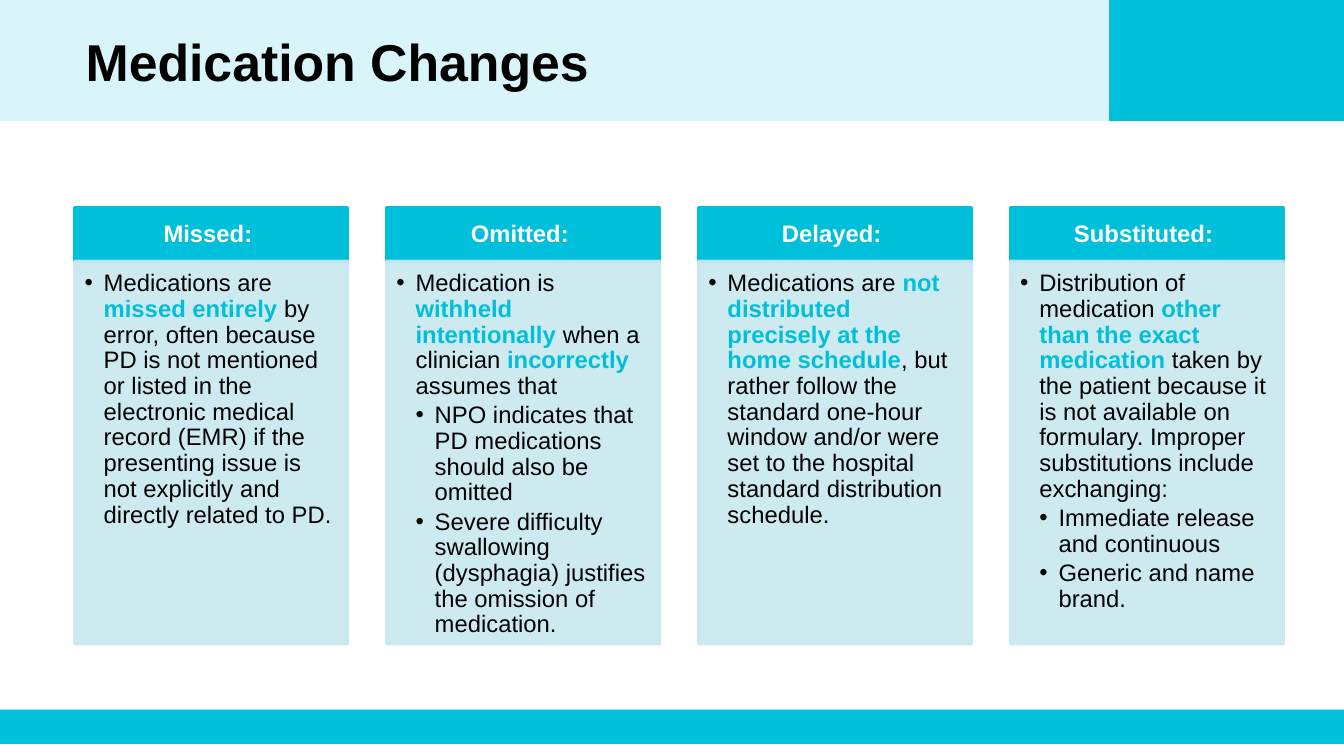
from dataclasses import dataclass

from lxml import etree
from pptx import Presentation, util as u
from pptx.dml.color import RGBColor
from pptx.enum import shapes as shp, text as txt
from pptx.oxml import ns

COLOURS = {
    "accent": "00BFDA",
    "banner": "D9F5F9",
    "panel": "C9E8F0",
    "ink": "000000",
    "paper": "FFFFFF",
}
FONT = "Arial"
BODY_SIZE = 17
INDENT = 0.19
PANEL_OPACITY = 90

# Grid, in inches
WIDTH, HEIGHT = 13.33, 7.5
BANNER_HEIGHT, BANNER_SPLIT = 1.2, 11
GRID_LEFT, GRID_RIGHT, COLUMN_WIDTH = 0.74, 12.73, 2.71
HEADING_ROW = (2.06, 0.54)
PANEL_ROW = (2.59, 3.8)


@dataclass
class Box:
    left: float
    top: float
    width: float
    height: float


@dataclass
class Change:
    """One column; words between asterisks are emphasised."""
    heading: str
    definition: str
    examples: tuple[str, ...] = ()


CHANGES = [
    Change("Missed: ",
           "Medications are *missed entirely *by error, often because PD is not "
           "mentioned or listed in the electronic medical record (EMR) if the "
           "presenting issue is not explicitly and directly related to PD."),
    Change("Omitted: ",
           "Medication is *withheld intentionally *when a clinician *incorrectly* "
           "assumes that",
           ("NPO indicates that PD medications should also be omitted",
            "Severe difficulty swallowing (dysphagia) justifies the omission of "
            "medication.")),
    Change("Delayed: ",
           "Medications are *not distributed precisely at the home schedule*, but "
           "rather follow the standard one-hour window and/or were set to the "
           "hospital standard distribution schedule."),
    Change("Substituted: ",
           "Distribution of medication *other than the exact medication *taken by "
           "the patient because it is not available on formulary. Improper "
           "substitutions include exchanging:",
           ("Immediate release and continuous", "Generic and name brand.")),
]


def rgb(name: str) -> RGBColor:
    return RGBColor.from_string(COLOURS[name])


def apply(target, formats: dict) -> None:
    for attribute, value in formats.items():
        setattr(target, attribute, value)


def set_frame(frame, anchor, left: float, top: float, right: float, bottom: float) -> None:
    apply(frame, {
        "word_wrap": True,
        "vertical_anchor": anchor,
        "margin_left": u.Inches(left),
        "margin_top": u.Inches(top),
        "margin_right": u.Inches(right),
        "margin_bottom": u.Inches(bottom),
    })


def add_run(paragraph, words: str, size: float, colour: str, bold: bool) -> None:
    run = paragraph.add_run()
    run.text = words
    apply(run.font, {"name": FONT, "size": u.Pt(size), "bold": bold})
    run.font.color.rgb = rgb(colour)


def add_block(slide, box: Box, colour: str, outline: float = 0, opacity: int = 100):
    block = slide.shapes.add_shape(
        shp.MSO_SHAPE.RECTANGLE,
        *(u.Inches(side) for side in (box.left, box.top, box.width, box.height)))
    block.shadow.inherit = False
    block.fill.solid()
    block.fill.fore_color.rgb = rgb(colour)
    if outline:
        block.line.width = u.Pt(outline)
        block.line.color.rgb = rgb(colour)
    else:
        block.line.fill.background()
    if opacity < 100:
        for tint in block._element.spPr.iter(ns.qn("a:srgbClr")):
            etree.SubElement(tint, ns.qn("a:alpha"), val=str(opacity * 1000))
    return block


def add_bullet(paragraph, level: int, words: str) -> None:
    properties = paragraph._p.get_or_add_pPr()
    properties.set("marL", str(u.Inches(INDENT * level)))
    properties.set("indent", str(-u.Inches(INDENT)))
    tint = etree.SubElement(properties, ns.qn("a:buClr"))
    etree.SubElement(tint, ns.qn("a:srgbClr"), val=COLOURS["ink"])
    etree.SubElement(properties, ns.qn("a:buFont"), typeface=FONT)
    etree.SubElement(properties, ns.qn("a:buChar"), char="•")
    apply(paragraph, {"level": level, "line_spacing": 0.9,
                      "alignment": txt.PP_ALIGN.LEFT})
    if level > 1:
        paragraph.space_before = u.Pt(2.5)
    for position, piece in enumerate(words.split("*")):
        emphasised = position % 2 == 1
        add_run(paragraph, piece, BODY_SIZE, "accent" if emphasised else "ink", emphasised)


def add_change(slide, left: float, change: Change) -> None:
    heading = add_block(slide, Box(left, HEADING_ROW[0], COLUMN_WIDTH, HEADING_ROW[1]),
                        "accent", outline=2).text_frame
    set_frame(heading, txt.MSO_ANCHOR.MIDDLE, 0.13, 0.08, 0.13, 0.08)
    label = heading.paragraphs[0]
    apply(label, {"alignment": txt.PP_ALIGN.CENTER, "line_spacing": 0.9})
    add_run(label, change.heading, BODY_SIZE, "paper", True)

    panel = add_block(slide, Box(left, PANEL_ROW[0], COLUMN_WIDTH, PANEL_ROW[1]),
                      "panel", outline=2, opacity=PANEL_OPACITY).text_frame
    set_frame(panel, txt.MSO_ANCHOR.TOP, 0.1, 0.1, 0.13, 0.15)
    add_bullet(panel.paragraphs[0], 1, change.definition)
    for example in change.examples:
        add_bullet(panel.add_paragraph(), 2, example)


def main() -> None:
    deck = Presentation()
    apply(deck, {"slide_width": u.Inches(WIDTH), "slide_height": u.Inches(HEIGHT)})
    slide = deck.slides.add_slide(deck.slide_layouts[6])

    # Banner and footer bands
    add_block(slide, Box(0, 0, WIDTH, BANNER_HEIGHT), "banner")
    add_block(slide, Box(BANNER_SPLIT, 0, WIDTH - BANNER_SPLIT, BANNER_HEIGHT), "accent")
    add_block(slide, Box(0, 7.04, WIDTH, 0.34), "accent")

    # Title
    title = slide.shapes.add_textbox(
        u.Inches(0.72), 0, u.Inches(BANNER_SPLIT - 0.72), u.Inches(BANNER_HEIGHT)).text_frame
    set_frame(title, txt.MSO_ANCHOR.MIDDLE, 0.13, 0.07, 0.13, 0.07)
    add_run(title.paragraphs[0], "Medication Changes", 37, "ink", True)

    # Four equally spaced columns
    pitch = (GRID_RIGHT - GRID_LEFT - COLUMN_WIDTH) / (len(CHANGES) - 1)
    for column, change in enumerate(CHANGES):
        add_change(slide, GRID_LEFT + column * pitch, change)

    deck.save("out.pptx")


if __name__ == "__main__":
    main()
